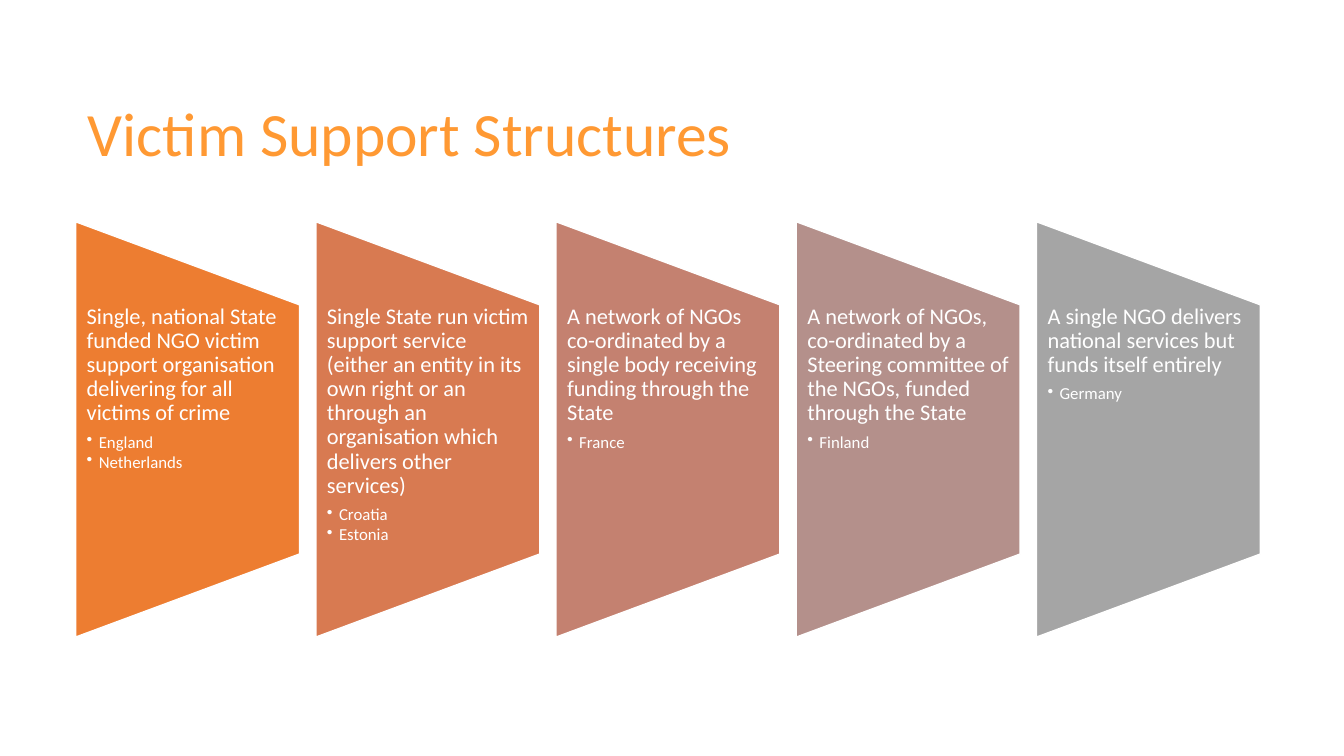
from lxml.etree import SubElement
from pptx import Presentation
from pptx.dml.color import RGBColor
from pptx.enum.shapes import MSO_SHAPE
from pptx.enum.text import MSO_ANCHOR
from pptx.oxml.ns import qn
from pptx.util import Inches, Pt

SLIDE_WIDTH, SLIDE_HEIGHT = 13.33, 7.5
FONT_NAME = "Calibri"
WHITE = RGBColor(0xFF, 0xFF, 0xFF)
TITLE_ORANGE = RGBColor(0xFF, 0x99, 0x33)
ORANGE = RGBColor(0xED, 0x7D, 0x31)
TERRACOTTA = RGBColor(0xD8, 0x7A, 0x51)
ROSE = RGBColor(0xC4, 0x81, 0x70)
MAUVE = RGBColor(0xB4, 0x90, 0x8B)
GREY = RGBColor(0xA5, 0xA5, 0xA5)

TITLE_BOX = (0.87, 0.63, 11.5, 1.45)
PANELS_BOX = (0.75, 2.2, 11.75, 4.12)
PANEL_WIDTH = 2.22
TEXT_SHARE = 0.6
SIDE_INSET = 0.11
BULLET_INDENT = 0.12

TITLE_FORMAT = {"size": Pt(44), "color": TITLE_ORANGE, "space_after": Pt(0)}
MODEL_FORMAT = {"size": Pt(16), "color": WHITE, "space_after": Pt(5.6)}
COUNTRY_FORMAT = {"size": Pt(12), "color": WHITE, "space_after": Pt(1.5)}

STRUCTURES = [
    (ORANGE, "Single, national State funded NGO victim support organisation "
     "delivering for all victims of crime", ["England", "Netherlands"]),
    (TERRACOTTA, "Single State run victim support service (either an entity in its own "
     "right or an through an organisation which delivers other services)",
     ["Croatia", "Estonia"]),
    (ROSE, "A network of NGOs co-ordinated by a single body receiving funding "
     "through the State", ["France"]),
    (MAUVE, "A network of NGOs, co-ordinated by a Steering committee of the NGOs, "
     "funded through the State", ["Finland"]),
    (GREY, "A single NGO delivers national services but funds itself entirely",
     ["Germany"]),
]


def add_text_frame(slide, box, anchor, side_inset):
    frame = slide.shapes.add_textbox(*map(Inches, box)).text_frame
    settings = {
        "word_wrap": True,
        "vertical_anchor": anchor,
        "margin_left": Inches(side_inset),
        "margin_right": Inches(side_inset),
        "margin_top": 0,
        "margin_bottom": 0,
    }
    for name, value in settings.items():
        setattr(frame, name, value)
    return frame


def add_bullet(paragraph):
    properties = paragraph._p.get_or_add_pPr()
    properties.set("marL", str(Inches(BULLET_INDENT)))
    properties.set("indent", str(-Inches(BULLET_INDENT)))
    SubElement(properties, qn("a:buChar")).set("char", "•")


def write_paragraph(paragraph, text, style):
    for name, value in {"line_spacing": 0.9, "space_after": style["space_after"]}.items():
        setattr(paragraph, name, value)
    run = paragraph.add_run()
    run.text = text
    for name, value in {"name": FONT_NAME, "size": style["size"]}.items():
        setattr(run.font, name, value)
    run.font.color.rgb = style["color"]


def draw_title(slide, box):
    frame = add_text_frame(slide, box, MSO_ANCHOR.MIDDLE, 0)
    write_paragraph(frame.paragraphs[0], "Victim Support Structures", TITLE_FORMAT)


def draw_panel(slide, box, color, model, countries):
    left, top, width, height = box
    shift = (height - width) / 2
    turned_box = (left - shift, top + shift, height, width)
    shape = slide.shapes.add_shape(
        MSO_SHAPE.FLOWCHART_MANUAL_OPERATION, *map(Inches, turned_box))
    shape.rotation = 270
    shape.shadow.inherit = False
    shape.fill.solid()
    shape.fill.fore_color.rgb = color
    shape.line.color.rgb = WHITE
    shape.line.width = Pt(1)

    text_height = height * TEXT_SHARE
    text_box = (left, top + (height - text_height) / 2, width, text_height)
    frame = add_text_frame(slide, text_box, MSO_ANCHOR.TOP, SIDE_INSET)
    write_paragraph(frame.paragraphs[0], model, MODEL_FORMAT)
    for country in countries:
        paragraph = frame.add_paragraph()
        paragraph.level = 1
        add_bullet(paragraph)
        write_paragraph(paragraph, country, COUNTRY_FORMAT)


def draw_panels(slide, box):
    left, top, width, height = box
    pitch = (width - PANEL_WIDTH) / (len(STRUCTURES) - 1)
    for column, structure in enumerate(STRUCTURES):
        panel_box = (left + column * pitch, top, PANEL_WIDTH, height)
        draw_panel(slide, panel_box, *structure)


def main():
    presentation = Presentation()
    presentation.slide_width = Inches(SLIDE_WIDTH)
    presentation.slide_height = Inches(SLIDE_HEIGHT)
    slide = presentation.slides.add_slide(presentation.slide_layouts[6])
    draw_title(slide, TITLE_BOX)
    draw_panels(slide, PANELS_BOX)
    presentation.save("out.pptx")


if __name__ == "__main__":
    main()
